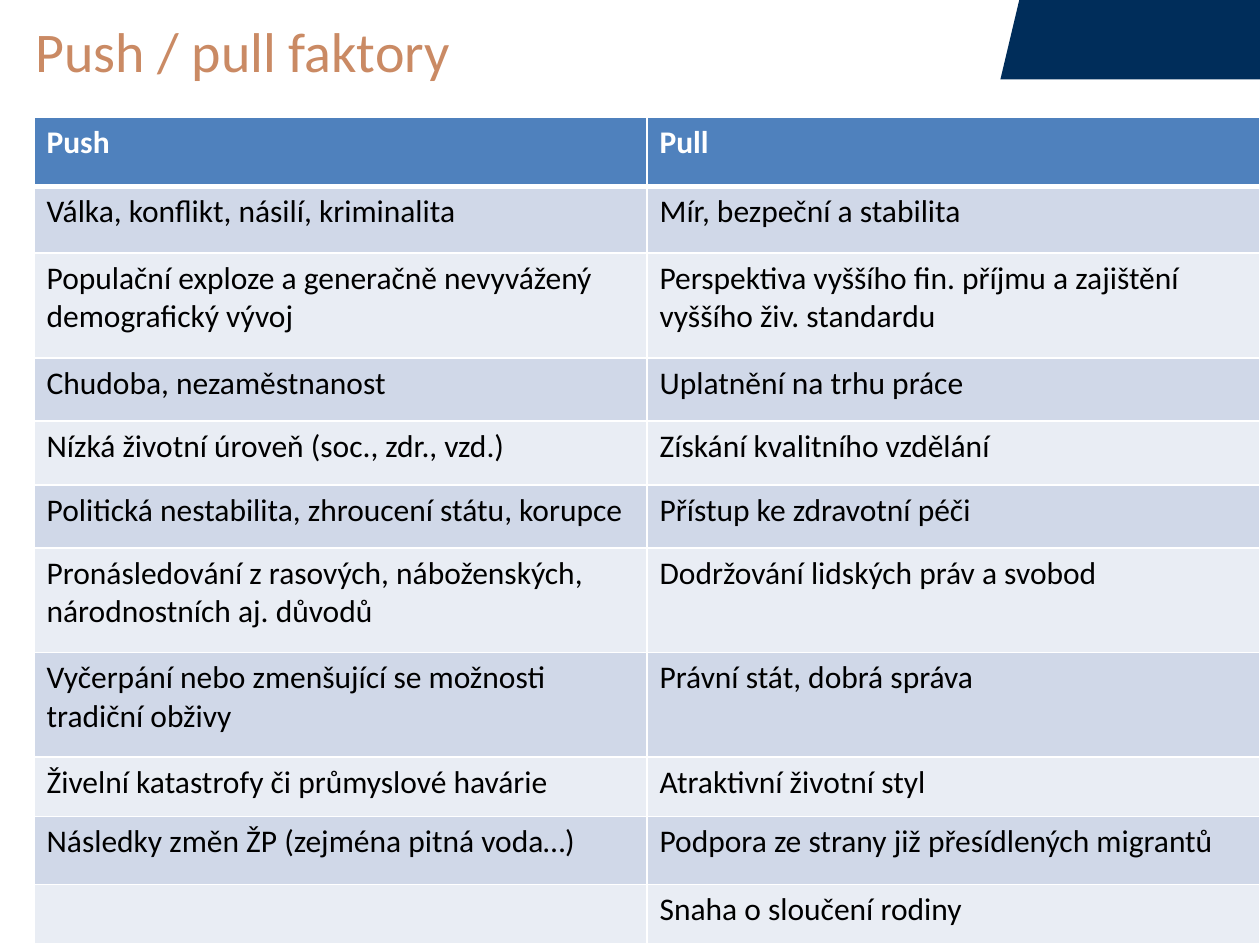
"""Build the slide on push and pull factors of migration."""
import pptx
import pptx.dml.color
import pptx.enum.text
import pptx.oxml
import pptx.oxml.ns
import pptx.util
from pptx.util import Inches

RGB = pptx.dml.color.RGBColor
NAVY = RGB(0x00, 0x2D, 0x5A)
TAN = RGB(0xCA, 0x8A, 0x64)
BLUE = RGB(0x4F, 0x81, 0xBD)
DARK = RGB(0xD0, 0xD8, 0xE8)
LIGHT = RGB(0xE9, 0xED, 0xF4)
WHITE = RGB(0xFF, 0xFF, 0xFF)
BLACK = RGB(0x00, 0x00, 0x00)

TITLE = "Push / pull faktory"
ROWS = [
    (0.55, "Push", "Pull"),
    (0.53, "Válka, konflikt, násilí, kriminalita", "Mír, bezpeční a stabilita"),
    (0.83, "Populační exploze a generačně nevyvážený demografický vývoj",
     "Perspektiva vyššího fin. příjmu a zajištění vyššího živ. standardu"),
    (0.5, "Chudoba, nezaměstnanost", "Uplatnění na trhu práce"),
    (0.51, "Nízká životní úroveň (soc., zdr., vzd.)", "Získání kvalitního vzdělání"),
    (0.5, "Politická nestabilita, zhroucení státu, korupce", "Přístup ke zdravotní péči"),
    (0.83, "Pronásledování z rasových, náboženských, národnostních aj. důvodů",
     "Dodržování lidských práv a svobod"),
    (0.83, "Vyčerpání nebo zmenšující se možnosti tradiční obživy",
     "Právní stát, dobrá správa"),
    (0.47, "Živelní katastrofy či průmyslové havárie", "Atraktivní životní styl"),
    (0.54, "Následky změn ŽP (zejména pitná voda…)",
     "Podpora ze strany již přesídlených migrantů"),
    (0.47, "", "Snaha o sloučení rodiny"),
]
WIDE, HIGH = 10, 7.5
LEFT, TOP = 0.27, 0.93
CORNER = [(7.94, 0.63), (8.09, 0), (WIDE, 0), (WIDE, 0.63)]


def write(frame, text, size=18, color=BLACK, bold=False):
    """Put formatted text in a frame."""
    run = frame.paragraphs[0].add_run()
    run.text = text
    font = run.font
    font.name, font.size, font.bold = "Calibri", pptx.util.Pt(size), bold
    font.color.rgb = color


def edge(cell, **widths):
    """Draw white cell borders, with widths in points."""
    props = cell._tc.get_or_add_tcPr()
    for side in "LRTB":
        width = pptx.util.Pt(widths.get(side, 1))
        props.append(pptx.oxml.parse_xml(
            f'<a:ln{side} {pptx.oxml.ns.nsdecls("a")} w="{width}"><a:solidFill>'
            f'<a:srgbClr val="{WHITE}"/></a:solidFill></a:ln{side}>'))


def draw_corner(slide):
    """Draw the slanted corner block."""
    points = [(Inches(x), Inches(y)) for x, y in CORNER]
    form = slide.shapes.build_freeform(*points[0])
    form.add_line_segments(points[1:], close=True)
    shape = form.convert_to_shape()
    shape.shadow.inherit = False
    shape.fill.solid()
    shape.fill.fore_color.rgb = NAVY
    shape.line.fill.background()


def draw_title(slide):
    """Draw the heading."""
    box = slide.shapes.add_textbox(0, Inches(0.08), Inches(WIDE), Inches(0.64))
    frame = box.text_frame
    frame.word_wrap = True
    frame.margin_left = frame.margin_right = Inches(0.28)
    frame.vertical_anchor = pptx.enum.text.MSO_ANCHOR.MIDDLE
    write(frame, TITLE, size=32, color=TAN)


def draw_table(slide):
    """Draw the two-column table of factors."""
    width = WIDE - LEFT
    table = slide.shapes.add_table(
        len(ROWS), 2, Inches(LEFT), Inches(TOP),
        Inches(width), Inches(HIGH - TOP)).table
    for column in table.columns:
        column.width = Inches(width / 2)
    for i, (height, *texts) in enumerate(ROWS):
        table.rows[i].height = Inches(height)
        head = i == 0
        for j, text in enumerate(texts):
            cell = table.cell(i, j)
            edge(cell, T=3 if i == 1 else 1, B=3 if head else 1)
            cell.fill.solid()
            cell.fill.fore_color.rgb = BLUE if head else (LIGHT, DARK)[i % 2]
            if text:
                write(cell.text_frame, text, color=WHITE if head else BLACK, bold=head)


def main():
    """Build and save the deck."""
    deck = pptx.Presentation()
    deck.slide_width, deck.slide_height = Inches(WIDE), Inches(HIGH)
    slide = deck.slides.add_slide(deck.slide_layouts[6])
    draw_corner(slide)
    draw_title(slide)
    draw_table(slide)
    deck.save("out.pptx")


if __name__ == "__main__":
    main()
